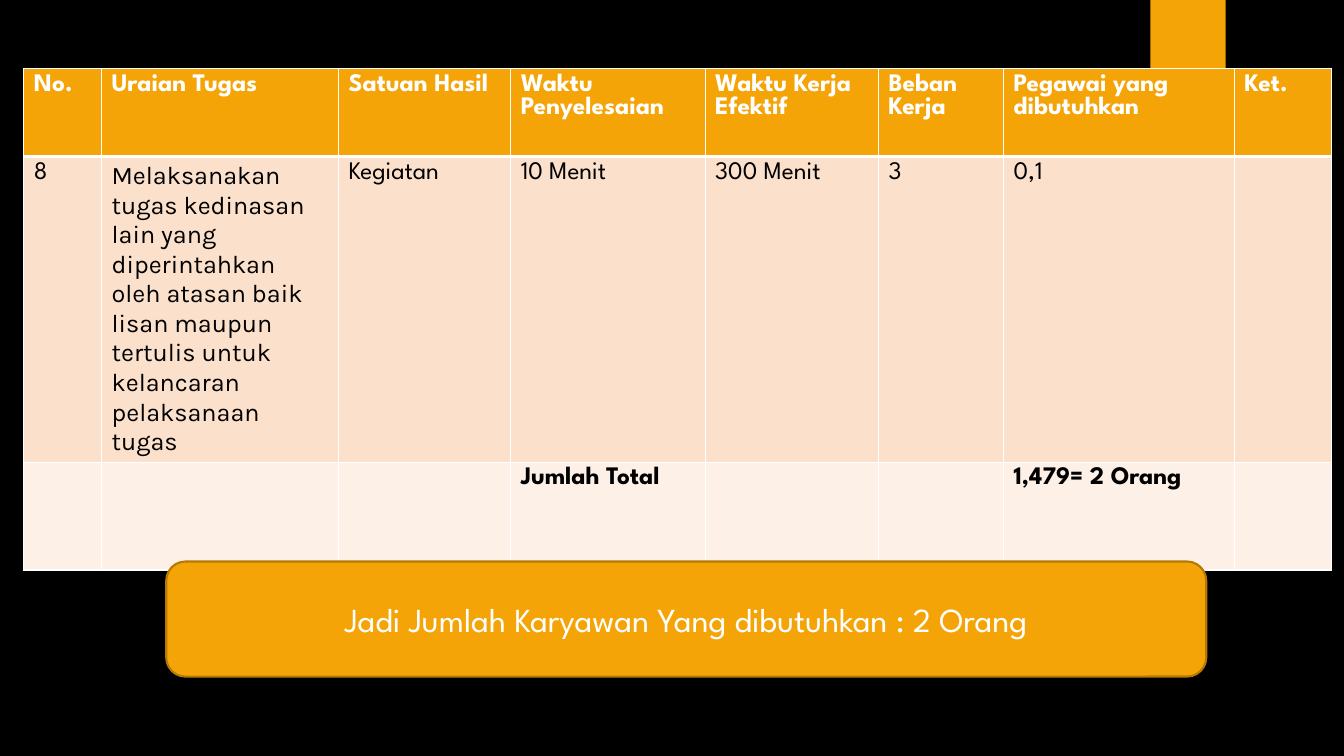
from lxml import etree
from pptx import Presentation
from pptx.dml.color import RGBColor
from pptx.enum.shapes import MSO_SHAPE
from pptx.enum.text import MSO_ANCHOR, PP_ALIGN
from pptx.oxml.ns import qn
from pptx.util import Cm, Pt

RECTANGLE = MSO_SHAPE.RECTANGLE
ROUNDED = MSO_SHAPE.ROUNDED_RECTANGLE
MIDDLE = MSO_ANCHOR.MIDDLE
CENTER = PP_ALIGN.CENTER

COLORS = {
    "black": "000000",
    "white": "FFFFFF",
    "orange": "F5A408",
    "brown": "B57906",
    "peach": "FBE0CC",
    "cream": "FDF0E7",
}
HEADING_FONT = "League Spartan"
BODY_FONT = "Karla"

COLUMN_WIDTHS = [1.96, 5.97, 4.34, 4.9, 4.37, 3.15, 5.82, 2.44]
ROW_HEIGHTS = [2.21, 5.03, 2.72]
ROW_FILLS = ["orange", "peach", "cream"]
TASK = ("Melaksanakan tugas kedinasan lain yang diperintahkan oleh atasan baik "
        "lisan maupun tertulis untuk kelancaran pelaksanaan tugas")
WORKLOAD = [
    ["No.", "Uraian Tugas", "Satuan Hasil", "Waktu Penyelesaian",
     "Waktu Kerja Efektif", "Beban Kerja", "Pegawai yang dibutuhkan", "Ket."],
    ["8", TASK, "Kegiatan", "10 Menit", "300 Menit", "3", "0,1", ""],
    ["", "", "", "Jumlah Total", "", "", "1,479= 2 Orang", ""],
]


def rgb(name):
    return RGBColor.from_string(COLORS[name])


class SlideBuilder:
    def __init__(self, slide):
        self.slide = slide

    def background(self, color):
        fill = self.slide.background.fill
        fill.solid()
        fill.fore_color.rgb = rgb(color)

    def style_text(self, para, size, color, font=HEADING_FONT, bold=False):
        for span in para.runs:
            span.font.name = font
            span.font.size = Pt(size)
            span.font.bold = bold
            span.font.color.rgb = rgb(color)

    def shape(self, kind, left, top, width, height, fill, line=None):
        box = self.slide.shapes.add_shape(
            kind, Cm(left), Cm(top), Cm(width), Cm(height))
        box.shadow.inherit = False
        box.fill.solid()
        box.fill.fore_color.rgb = rgb(fill)
        if line:
            box.line.color.rgb = rgb(line)
            box.line.width = Pt(1.5)
        else:
            box.line.fill.background()
        return box

    def banner(self, text, left, top, width, height):
        box = self.shape(ROUNDED, left, top, width, height, "orange", "brown")
        frame = box.text_frame
        frame.word_wrap = True
        frame.vertical_anchor = MIDDLE
        frame.text = text
        para = frame.paragraphs[0]
        para.alignment = CENTER
        self.style_text(para, 24, "white")

    def cell_borders(self, cell, top, bottom):
        """Draw white borders; top and bottom are widths in points."""
        properties = cell._tc.get_or_add_tcPr()
        for side, width in (("L", 1), ("R", 1), ("T", top), ("B", bottom)):
            line = etree.SubElement(properties, qn(f"a:ln{side}"), w=str(Pt(width)))
            fill = etree.SubElement(line, qn("a:solidFill"))
            etree.SubElement(fill, qn("a:srgbClr"), val=COLORS["white"])

    def workload_table(self, left, top):
        table = self.slide.shapes.add_table(
            len(ROW_HEIGHTS), len(COLUMN_WIDTHS), Cm(left), Cm(top),
            Cm(sum(COLUMN_WIDTHS)), Cm(sum(ROW_HEIGHTS))).table
        table.horz_banding = False
        for column, width in zip(table.columns, COLUMN_WIDTHS):
            column.width = Cm(width)
        for index, (row, height) in enumerate(zip(table.rows, ROW_HEIGHTS)):
            row.height = Cm(height)
            for cell, text in zip(row.cells, WORKLOAD[index]):
                self.cell_borders(cell, top=3 if index == 1 else 1,
                                  bottom=3 if index == 0 else 1)
                cell.fill.solid()
                cell.fill.fore_color.rgb = rgb(ROW_FILLS[index])
                cell.text_frame.text = text
                self.style_text(
                    cell.text_frame.paragraphs[0], 18,
                    color="white" if index == 0 else "black",
                    font=BODY_FONT if text == TASK else HEADING_FONT,
                    bold=index != 1)


def main():
    deck = Presentation()
    deck.slide_width = Cm(33.87)
    deck.slide_height = Cm(19.05)
    page = SlideBuilder(deck.slides.add_slide(deck.slide_layouts[6]))
    page.background("black")
    page.shape(RECTANGLE, 28.99, 0, 1.9, 3.18, "orange")
    page.workload_table(0.6, 1.73)
    page.banner("Jadi Jumlah Karyawan Yang dibutuhkan : 2 Orang",
                4.19, 14.15, 26.21, 2.9)
    deck.save("out.pptx")


if __name__ == "__main__":
    main()
